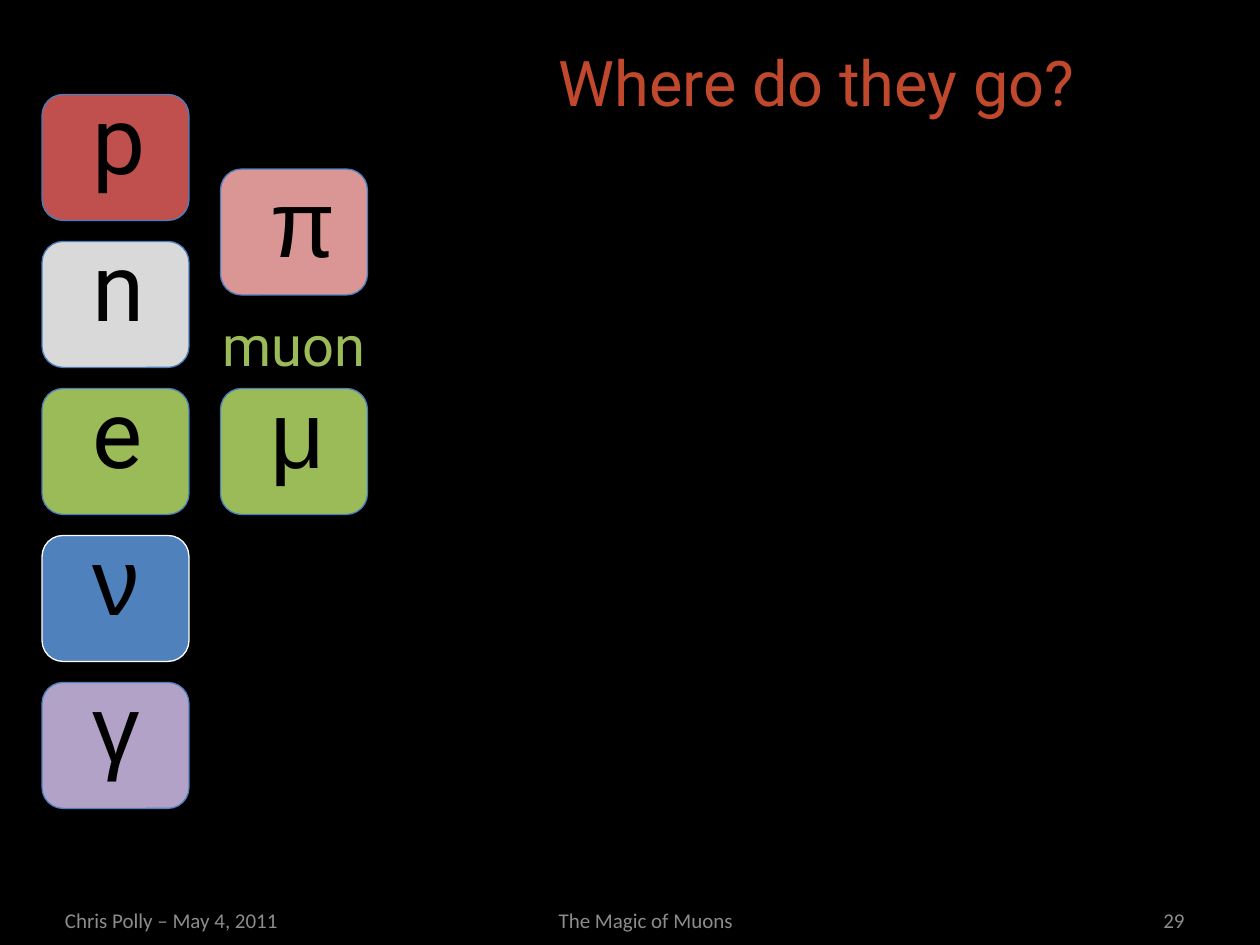
from pptx import Presentation
from pptx.dml.color import RGBColor
from pptx.enum.shapes import MSO_SHAPE
from pptx.enum.text import MSO_ANCHOR, MSO_AUTO_SIZE, PP_ALIGN
from pptx.util import Pt

SCALE = 7620


def px(*lengths):
    return [n * SCALE for n in lengths]


def rgb(value):
    return RGBColor.from_string(value)


class Deck:
    FORMATS = {
        "title": {"name": "Roboto", "size": Pt(36)},
        "label": {"name": "Roboto", "size": Pt(32)},
        "latin": {"name": "Roboto", "size": Pt(54)},
        "greek": {"name": "Arial", "size": Pt(54)},
        "footer": {"name": "Calibri", "size": Pt(12)},
    }

    def __init__(self):
        self.prs = Presentation()
        self.prs.slide_width, self.prs.slide_height = px(1200, 900)

    def slide(self, background):
        self.s = self.prs.slides.add_slide(self.prs.slide_layouts[5])
        fill = self.s.background.fill
        fill.solid()
        fill.fore_color.rgb = rgb(background)

    def set_text(self, tf, text, style, color, align=PP_ALIGN.LEFT, **frame):
        for key, value in frame.items():
            setattr(tf, key, value)
        p = tf.paragraphs[0]
        p.alignment = align
        r = p.add_run()
        r.text = text
        for key, value in self.FORMATS[style].items():
            setattr(r.font, key, value)
        r.font.color.rgb = rgb(color)

    def title(self, text, box, color):
        sp = self.s.shapes.title
        sp.left, sp.top, sp.width, sp.height = px(*box)
        self.set_text(sp.text_frame, text, "title", color, word_wrap=True,
                      vertical_anchor=MSO_ANCHOR.TOP, auto_size=MSO_AUTO_SIZE.NONE)

    def label(self, text, box, style, color):
        sp = self.s.shapes.add_textbox(*px(*box))
        self.set_text(sp.text_frame, text, style, color, word_wrap=False,
                      auto_size=MSO_AUTO_SIZE.SHAPE_TO_FIT_TEXT)

    def footer(self, text, left, width, align):
        sp = self.s.shapes.add_textbox(*px(left, 852, width, 48))
        self.set_text(sp.text_frame, text, "footer", "8C8C8C", align,
                      word_wrap=True, vertical_anchor=MSO_ANCHOR.MIDDLE)

    def tile(self, left, top, fill, line):
        sp = self.s.shapes.add_shape(MSO_SHAPE.ROUNDED_RECTANGLE, *px(left, top, 140, 120))
        sp.shadow.inherit = False
        sp.fill.solid()
        sp.fill.fore_color.rgb = rgb(fill)
        sp.line.color.rgb = rgb(line)
        sp.line.width = Pt(0.75)

    def particle(self, symbol, left, top, width, style, fill, line="4B7EBC", rise=20):
        self.tile(left, top, fill, line)
        self.label(symbol, (left + 36, top - rise, width, 121), style, "000000")


def main():
    deck = Deck()
    deck.slide("000000")
    deck.title("Where do they go?", (520, 35, 570, 85), "C0482C")

    stable = [
        ("p", 70, "latin", "C0504D", "4B7EBC"),
        ("n", 70, "latin", "D9D9D9", "4B7EBC"),
        ("e", 67, "latin", "9BBB59", "4B7EBC"),
        ("ν", 72, "greek", "4F81BD", "FFFFFF"),
        ("γ", 61, "greek", "B3A2C7", "4F81BD"),
    ]
    for row, (symbol, *look) in enumerate(stable):
        deck.particle(symbol, 40, 90 + 140 * row, *look)

    deck.particle("π", 210, 161, 74, "greek", "D99694", rise=12)
    deck.particle("μ", 210, 370, 77, "greek", "9BBB59")
    deck.label("muon", (200, 290, 166, 77), "label", "9BBB59")

    deck.footer("Chris Polly – May 4, 2011", 50, 280, PP_ALIGN.LEFT)
    deck.footer("The Magic of Muons", 370, 490, PP_ALIGN.CENTER)
    deck.footer("29", 950, 190, PP_ALIGN.RIGHT)

    deck.prs.save("out.pptx")


if __name__ == "__main__":
    main()
